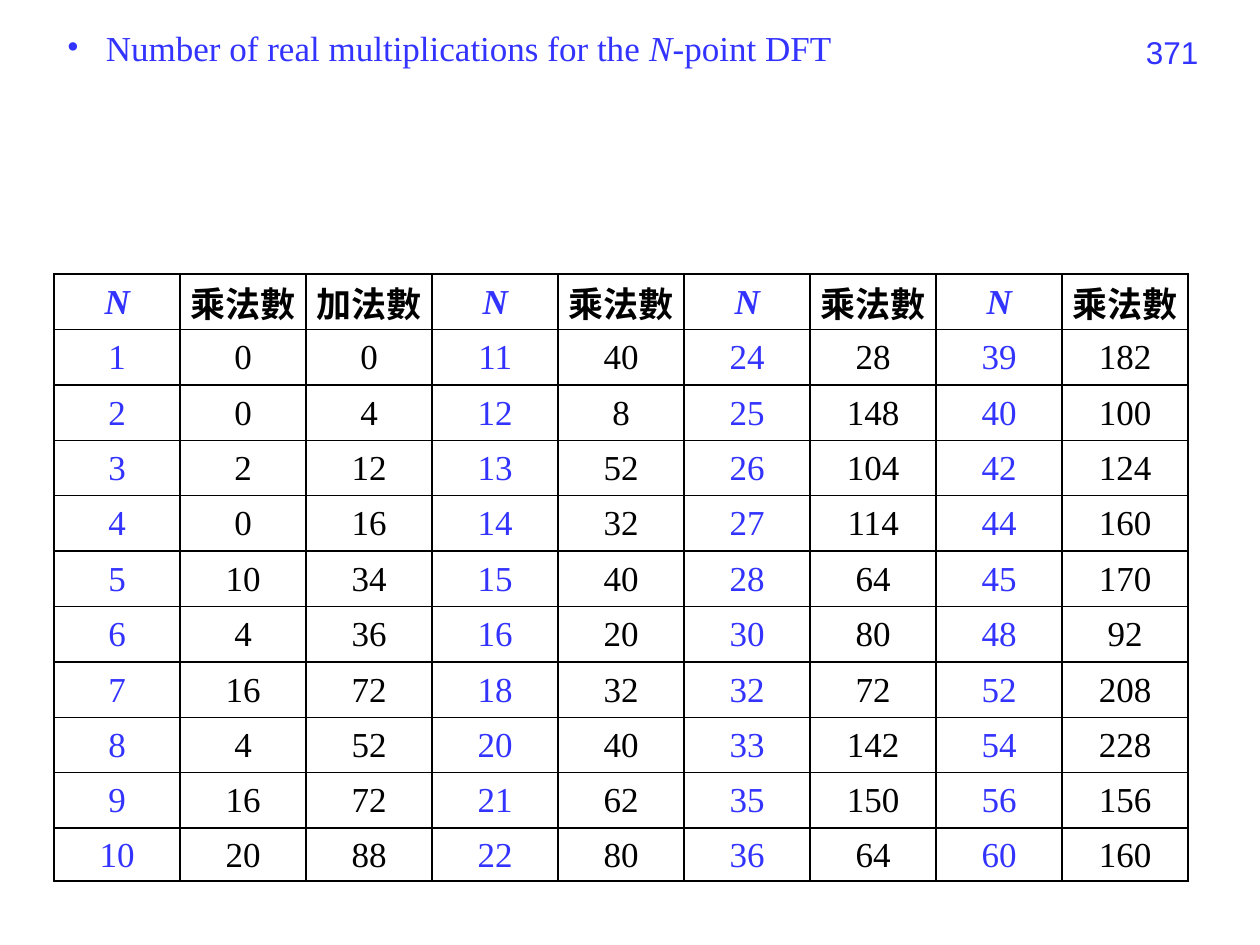
from lxml.etree import SubElement as Sub
from pptx import Presentation
from pptx.dml.color import RGBColor
from pptx.enum.text import MSO_ANCHOR as Anchor, PP_ALIGN as Align
from pptx.oxml.ns import qn
from pptx.util import Inches, Pt

BLUE = RGBColor(0x33, 0x33, 0xFF)
BLACK = RGBColor(0, 0, 0)
SERIF = "Times New Roman"
SANS = "Arial"
HAN = "Noto Sans CJK TC"

WIDE, HIGH = Inches(10), Inches(7.5)
LEFT = 0.043
COLS = 9
KEYS = (0, 3, 5, 7)
HEAD = ["N", "乘法數", "加法數"] + ["N", "乘法數"] * 3
ROWS = [
    (1, 0, 0, 11, 40, 24, 28, 39, 182),
    (2, 0, 4, 12, 8, 25, 148, 40, 100),
    (3, 2, 12, 13, 52, 26, 104, 42, 124),
    (4, 0, 16, 14, 32, 27, 114, 44, 160),
    (5, 10, 34, 15, 40, 28, 64, 45, 170),
    (6, 4, 36, 16, 20, 30, 80, 48, 92),
    (7, 16, 72, 18, 32, 32, 72, 52, 208),
    (8, 4, 52, 20, 40, 33, 142, 54, 228),
    (9, 16, 72, 21, 62, 35, 150, 56, 156),
    (10, 20, 88, 22, 80, 36, 64, 60, 160),
]


def box(x, y, w, h):
    return int(WIDE * x), int(HIGH * y), int(WIDE * w), int(HIGH * h)


def style(run, size, face, color, bold=False, slant=False):
    font = run.font
    font.size, font.name = Pt(size), face
    font.bold, font.italic = bold, slant
    font.color.rgb = color
    if face == HAN:
        Sub(font._element, qn("a:ea"), typeface=face)


def add_head(slide):
    head = slide.shapes.title
    head.left, head.top, head.width, head.height = box(LEFT, 0.021, 0.638, 0.073)
    frame = head.text_frame
    frame.vertical_anchor = Anchor.TOP
    para = frame.paragraphs[0]
    para.alignment = Align.LEFT
    para.space_before = Pt(4)
    for text in ("Number of real multiplications for the ", "N", "-point DFT"):
        run = para.add_run()
        run.text = text
        style(run, 20, SERIF, BLUE, slant=text == "N")
    props = para._p.get_or_add_pPr()
    props.set("marL", str(Inches(0.31)))
    props.set("indent", str(-Inches(0.31)))
    Sub(props, qn("a:buFont"), typeface=SERIF)
    Sub(props, qn("a:buChar"), char="•")


def add_page(slide, text):
    frame = slide.shapes.add_textbox(*box(0.728, 0.028, 0.233, 0.069)).text_frame
    frame.word_wrap = True
    frame.text = text
    para = frame.paragraphs[0]
    para.alignment = Align.RIGHT
    style(para.runs[0], 18, SANS, BLUE)


def add_edges(cell):
    props = cell._tc.get_or_add_tcPr()
    for spot, side in enumerate(("lnL", "lnR", "lnT", "lnB")):
        line = Sub(props, qn(f"a:{side}"), w=str(Pt(1)))
        fill = Sub(line, qn("a:solidFill"))
        Sub(fill, qn("a:srgbClr"), val=str(BLACK))
        props.insert(spot, line)


def fill_cell(cell, text, key, top):
    cell.fill.background()
    cell.margin_left = cell.margin_right = cell.margin_top = Inches(0.01)
    cell.margin_bottom = 0
    cell.vertical_anchor = Anchor.MIDDLE
    cell.text_frame.text = text
    para = cell.text_frame.paragraphs[0]
    para.alignment = Align.CENTER
    face = HAN if top and not key else SERIF
    style(para.runs[0], 20, face, BLUE if key else BLACK, top, top and key)
    add_edges(cell)


def add_grid(slide):
    data = [HEAD, *ROWS]
    area = box(LEFT, 0.29, 0.9, 0.643)
    grid = slide.shapes.add_table(len(data), COLS, *area).table
    grid.horz_banding = False
    for col in grid.columns:
        col.width = Inches(1)
    for row in grid.rows:
        row.height = Inches(0.44)
    grid.rows[len(ROWS)].height = Inches(0.42)
    for r, line in enumerate(data):
        for c, value in enumerate(line):
            fill_cell(grid.cell(r, c), str(value), c in KEYS, r == 0)


def main():
    deck = Presentation()
    deck.slide_width, deck.slide_height = WIDE, HIGH
    slide = deck.slides.add_slide(deck.slide_layouts[5])
    add_page(slide, "371")
    add_head(slide)
    add_grid(slide)
    deck.save("out.pptx")


if __name__ == "__main__":
    main()
